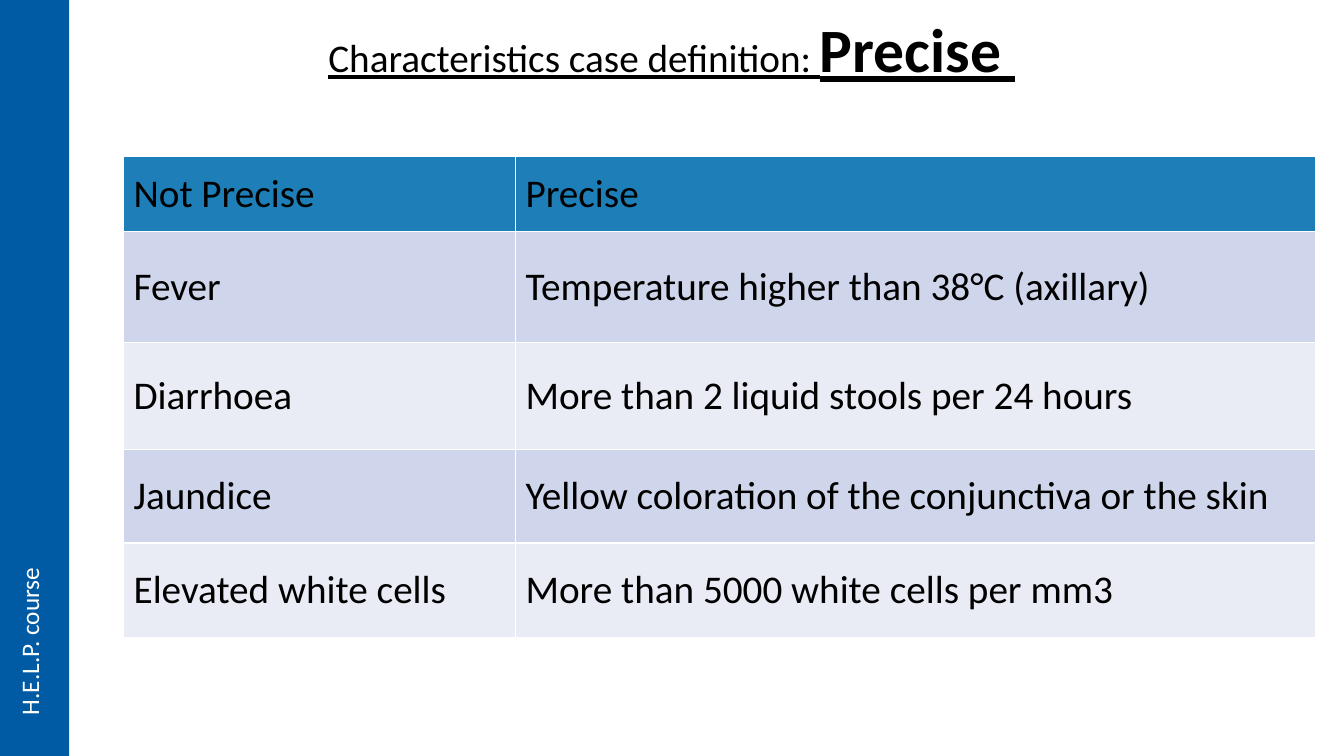
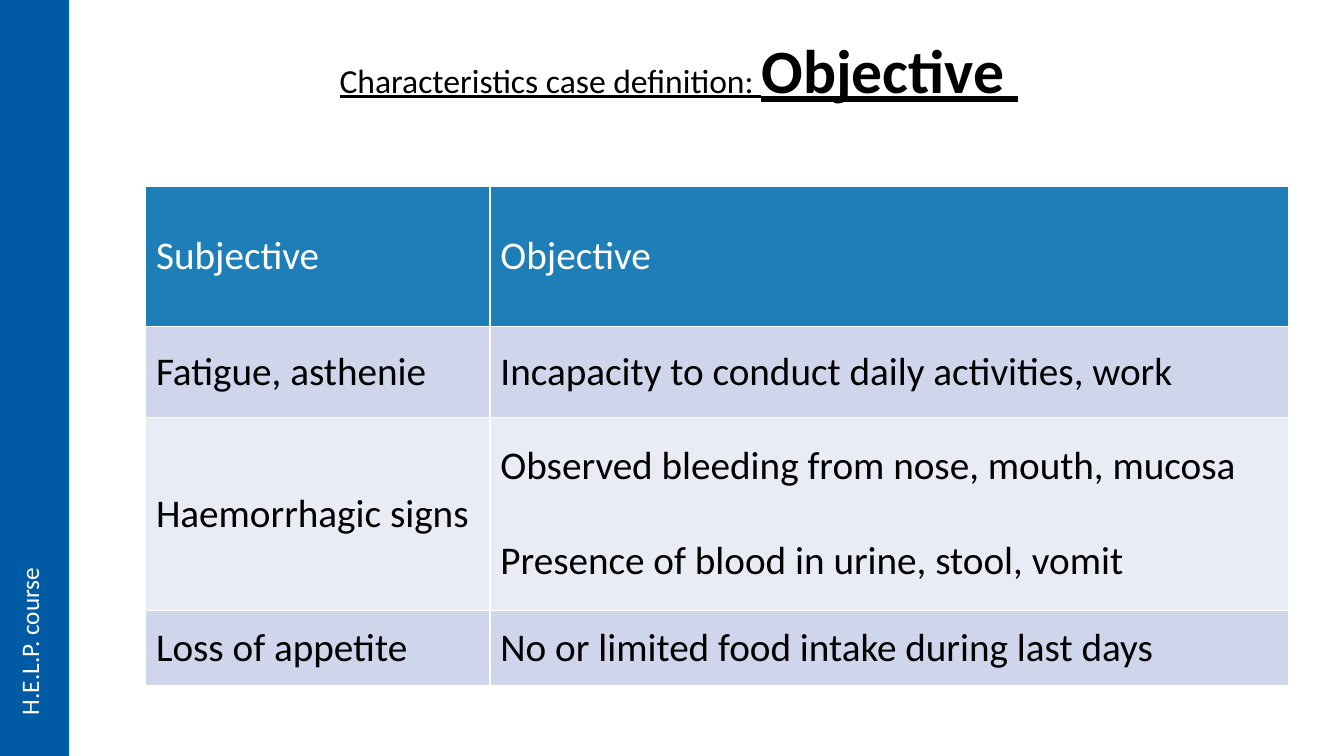
from lxml.etree import SubElement
from pptx import Presentation
from pptx.dml.color import RGBColor
from pptx.enum.shapes import MSO_SHAPE
from pptx.enum.text import MSO_ANCHOR, MSO_AUTO_SIZE, PP_ALIGN
from pptx.oxml.ns import qn
from pptx.util import Pt

FONT = "Calibri"
BLACK = RGBColor(0x00, 0x00, 0x00)
WHITE = RGBColor(0xFF, 0xFF, 0xFF)
BAND_BLUE = RGBColor(0x00, 0x5B, 0xA4)
HEADER_BLUE = RGBColor(0x1E, 0x7F, 0xB8)
ROW_FILLS = (RGBColor(0xCF, 0xD5, 0xEA), RGBColor(0xE9, 0xEB, 0xF5))
TITLE_LEAD = "Characteristics case definition: "
LINE_GAP = 34

PRECISE_ROWS = [
    ("Not Precise", "Precise"),
    ("Fever", "Temperature higher than 38°C (axillary)"),
    ("Diarrhoea", "More than 2 liquid stools per 24 hours"),
    ("Jaundice", "Yellow coloration of the conjunctiva or the skin"),
    ("Elevated white cells", "More than 5000 white cells per mm3"),
]
OBJECTIVE_ROWS = [
    ("Subjective", "Objective"),
    ("Fatigue, asthenie", "Incapacity to conduct daily activities, work"),
    ("Haemorrhagic signs",
     "Observed bleeding from nose, mouth, mucosa\n"
     "Presence of blood in urine, stool, vomit"),
    ("Loss of appetite", "No or limited food intake during last days"),
]


def set_attrs(target, values):
    for name, value in values.items():
        setattr(target, name, value)


def add_run(p, text, size, color=BLACK, **extra):
    r = p.add_run()
    r.text = text
    set_attrs(r.font, {"name": FONT, "size": Pt(size), "bold": False, **extra})
    r.font.color.rgb = color


def move_to_layout(sp, layout):
    layout.shapes.element.append(sp.element)


def add_side_band(s, layout):
    band = s.shapes.add_shape(MSO_SHAPE.RECTANGLE, 0, 0, Pt(49.5), Pt(540))
    band.shadow.inherit = False
    band.fill.solid()
    band.fill.fore_color.rgb = BAND_BLUE
    band.line.fill.background()

    label = s.shapes.add_textbox(Pt(6.5), Pt(404), Pt(36), Pt(114))
    tf = label.text_frame
    tf.word_wrap = False
    label.element.txBody.find(qn("a:bodyPr")).set("vert", "vert270")
    add_run(tf.paragraphs[0], "H.E.L.P. course", 18, WHITE)

    for sp in (band, label):
        move_to_layout(sp, layout)


def set_title(s, keyword, left, top, lead_size):
    sp = s.shapes.title
    set_attrs(sp, {"left": Pt(left), "top": Pt(top),
                   "width": Pt(828), "height": Pt(104.5)})
    tf = sp.text_frame
    set_attrs(tf, {"word_wrap": True, "auto_size": MSO_AUTO_SIZE.NONE,
                   "vertical_anchor": MSO_ANCHOR.MIDDLE})
    p = tf.paragraphs[0]
    set_attrs(p, {"alignment": PP_ALIGN.CENTER, "line_spacing": 0.9})
    add_run(p, TITLE_LEAD, lead_size, underline=True)
    add_run(p, keyword + " ", 44, underline=True, bold=True)


def add_borders(cell):
    props = cell._tc.get_or_add_tcPr()
    for side in "LRTB":
        ln = SubElement(props, qn(f"a:ln{side}"), w=str(Pt(1)))
        fill = SubElement(ln, qn("a:solidFill"))
        SubElement(fill, qn("a:srgbClr"), val=str(WHITE))


def fill_cell(cell, text, fill, color):
    add_borders(cell)
    cell.fill.solid()
    cell.fill.fore_color.rgb = fill
    set_attrs(cell, {"vertical_anchor": MSO_ANCHOR.MIDDLE,
                     "margin_left": Pt(7.5), "margin_right": Pt(7.5),
                     "margin_top": Pt(3.6), "margin_bottom": Pt(3.6)})
    tf = cell.text_frame
    for i, line in enumerate(text.split("\n")):
        p = tf.add_paragraph() if i else tf.paragraphs[0]
        if i:
            p.space_before = Pt(LINE_GAP)
        add_run(p, line, 28, color)


def add_comparison(s, rows, left, top, widths, heights, header_color):
    frame = s.shapes.add_table(len(rows), len(widths), Pt(left), Pt(top),
                               Pt(sum(widths)), Pt(sum(heights)))
    table = frame.table
    for column, width in zip(table.columns, widths):
        column.width = Pt(width)
    for i, (texts, height) in enumerate(zip(rows, heights)):
        table.rows[i].height = Pt(height)
        fill = ROW_FILLS[(i - 1) % 2] if i else HEADER_BLUE
        color = BLACK if i else header_color
        for j, text in enumerate(texts):
            fill_cell(table.cell(i, j), text, fill, color)


def main():
    prs = Presentation()
    set_attrs(prs, {"slide_width": Pt(960), "slide_height": Pt(540)})
    layout = prs.slide_layouts.get_by_name("Title Only")

    s = prs.slides.add_slide(layout)
    add_side_band(s, layout)
    set_title(s, "Precise", 66, -14.5, 28)
    add_comparison(s, PRECISE_ROWS, 88, 111.5, (280, 572),
                   (54, 79, 76.5, 67, 67.5), BLACK)

    s = prs.slides.add_slide(layout)
    set_title(s, "Objective", 71, 0, 24)
    add_comparison(s, OBJECTIVE_ROWS, 104, 133, (246, 570.5),
                   (100, 65, 138, 54), WHITE)

    prs.save("out.pptx")


if __name__ == "__main__":
    main()
